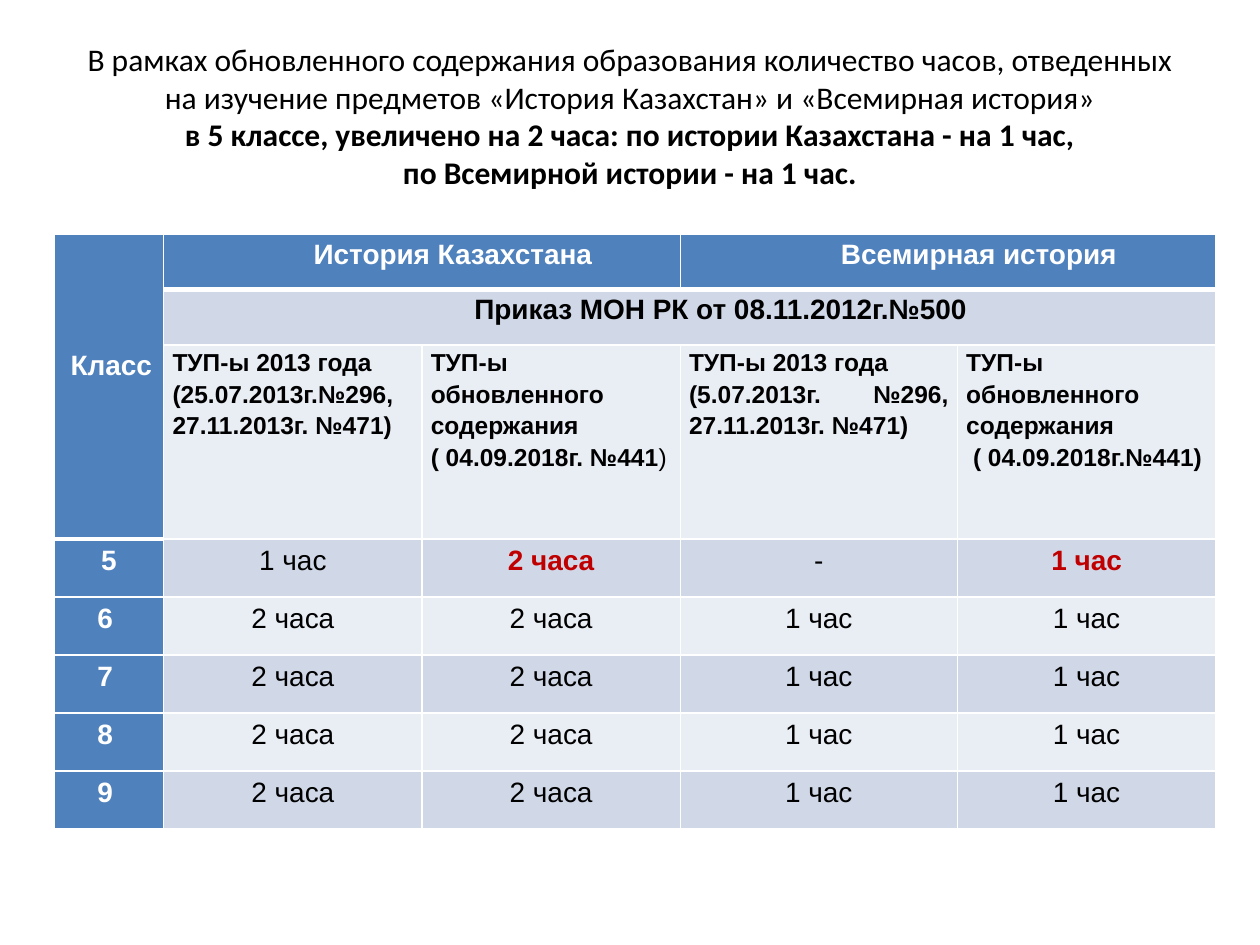
"""Build a slide comparing weekly history hours by class."""
import pptx
import pptx.util
import pptx.dml.color
import pptx.enum.text
import pptx.oxml
import pptx.oxml.ns

Inches, Pt = pptx.util.Inches, pptx.util.Pt
ALIGN = pptx.enum.text.PP_ALIGN
HUE = {"white": "FFFFFF", "black": "000000", "red": "C00000",
       "head": "4F81BD", "dark": "D0D8E8", "light": "E9EDF4"}

TITLE = [
    ("В рамках обновленного содержания образования количество часов, отведенных "
     "на изучение предметов «История Казахстан» и «Всемирная история»", False),
    ("в 5 классе, увеличено на 2 часа: по истории Казахстана - на 1 час,", True),
    ("по Всемирной истории - на 1 час.", True),
]
COLS = [0.87, 2.05, 2.05, 2.2, 2.05]
ROWS = [0.44, 0.44, 1.54] + [0.46] * 5
MERGES = [((0, 0), (2, 0)), ((0, 1), (0, 2)), ((0, 3), (0, 4)), ((1, 1), (1, 4))]
HEADS = [(0, 1, "История Казахстана", "white"),
         (0, 3, "Всемирная история", "white"),
         (1, 1, "Приказ МОН РК от 08.11.2012г.№500", "black")]
PLANS = [
    [("j", ["ТУП-ы 2013 года"]), ("l", ["(25.07.2013г.№296, 27.11.2013г. №471)"])],
    [("l", ["ТУП-ы"]), ("l", ["обновленного содержания"]),
     ("l", ["( 04.09.2018г. №441", ")"])],
    [("j", ["ТУП-ы 2013 года "]), ("j", ["(5.07.2013г. №296, 27.11.2013г. №471)"])],
    [("l", ["ТУП-ы обновленного содержания"]), ("l", [" ( 04.09.2018г.№441)"])],
]
HOURS = [
    ("5", "1 час", "2 часа", "-", "1 час"),
    ("6 ", "2 часа", "2 часа", "1 час", "1 час"),
    ("7 ", "2 часа", "2 часа", "1 час", "1 час"),
    ("8 ", "2 часа", "2 часа", "1 час", "1 час"),
    ("9 ", "2 часа", "2 часа", "1 час", "1 час"),
]
RAISED = [(3, 2), (3, 4)]
SIDES = {"c": ALIGN.CENTER, "l": ALIGN.LEFT, "j": ALIGN.JUSTIFY}


def color(name):
    return pptx.dml.color.RGBColor.from_string(HUE[name])


def add_run(para, text, size, bold, hue="black", font="Arial"):
    run = para.add_run()
    run.text = text
    run.font.size = Pt(size)
    run.font.bold = bold
    run.font.name = font
    run.font.color.rgb = color(hue)


def add_para(frame, first, side="c", space=1.15, after=0):
    para = frame.paragraphs[0] if first else frame.add_paragraph()
    para.alignment = SIDES[side]
    para.line_spacing = space
    para.space_after = Pt(after)
    return para


def style(cell, fill, row, col):
    cell.margin_left = cell.margin_right = Inches(0.07)
    cell.margin_top = cell.margin_bottom = 0
    cell.fill.solid()
    cell.fill.fore_color.rgb = color(fill)
    thick = {"T": row == 1 and col > 0 or (row, col) == (3, 0),
             "B": row == 0 or col == 0 and row == 2}
    for spot, side in enumerate("LRTB"):
        width = Pt(3 if thick.get(side) else 1)
        line = pptx.oxml.parse_xml(
            f'<a:ln{side} {pptx.oxml.ns.nsdecls("a")} w="{width}"><a:solidFill>'
            f'<a:srgbClr val="{HUE["white"]}"/></a:solidFill></a:ln{side}>')
        cell._tc.get_or_add_tcPr().insert(spot, line)


def add_title(slide):
    box = slide.shapes.add_textbox(Inches(0.5), Inches(0.29), Inches(9), Inches(1.25))
    frame = box.text_frame
    frame.word_wrap = True
    frame.vertical_anchor = pptx.enum.text.MSO_ANCHOR.MIDDLE
    for spot, (text, bold) in enumerate(TITLE):
        add_run(add_para(frame, spot == 0, space=1.0), text, 18, bold, font="Calibri")


def add_hours(slide):
    table = slide.shapes.add_table(
        len(ROWS), len(COLS), Inches(0.43), Inches(1.86),
        Inches(sum(COLS)), Inches(sum(ROWS))).table
    for col, width in zip(table.columns, COLS):
        col.width = Inches(width)
    for row, height in zip(table.rows, ROWS):
        row.height = Inches(height)
    for row in range(len(ROWS)):
        for col in range(len(COLS)):
            band = "dark" if row % 2 else "light"
            fill = "head" if row == 0 or col == 0 else band
            style(table.cell(row, col), fill, row, col)
    for start, end in MERGES:
        table.cell(*start).merge(table.cell(*end))

    label = table.cell(0, 0)
    label.margin_top, label.margin_left = Inches(0.88), Inches(0.13)
    add_run(add_para(label.text_frame, True, "l"), "Класс", 16, True, "white")
    for row, col, text, hue in HEADS:
        cell = table.cell(row, col)
        cell.margin_left = Inches(0.56)
        add_run(add_para(cell.text_frame, True), text, 16, True, hue)
    for col, plan in enumerate(PLANS, 1):
        frame = table.cell(2, col).text_frame
        for spot, (side, texts) in enumerate(plan):
            para = add_para(frame, spot == 0, side)
            for text in texts:
                add_run(para, text, 14, text != ")")
    for row, line in enumerate(HOURS, 3):
        for col, text in enumerate(line):
            hue = "white" if col == 0 else "red" if (row, col) in RAISED else "black"
            para = add_para(table.cell(row, col).text_frame, True, space=1.2, after=10)
            add_run(para, text, 16, hue != "black", hue)


def main():
    deck = pptx.Presentation()
    deck.slide_width, deck.slide_height = Inches(10), Inches(7.5)
    slide = deck.slides.add_slide(deck.slide_layouts[6])
    add_title(slide)
    add_hours(slide)
    deck.save("out.pptx")


if __name__ == "__main__":
    main()
